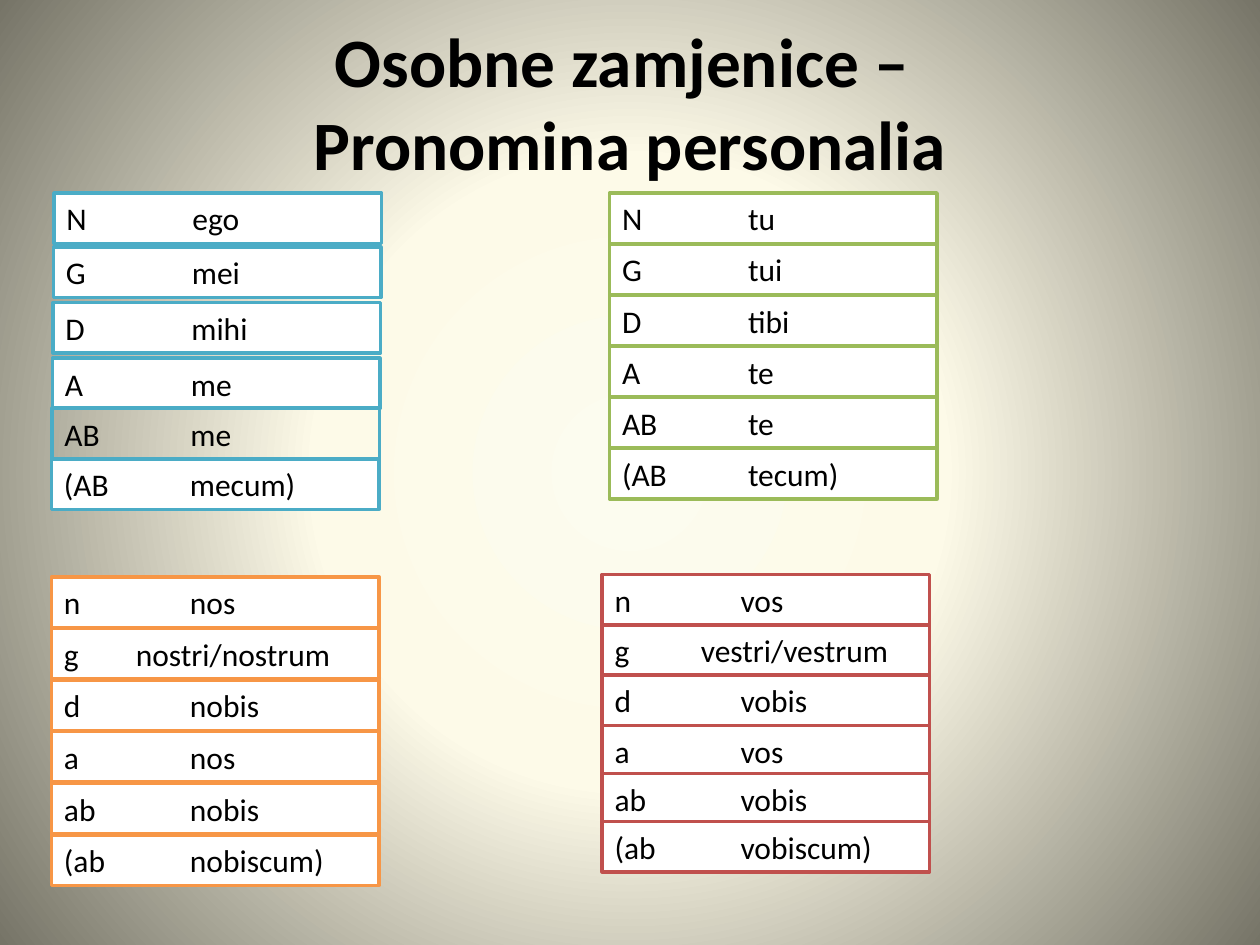
from pptx import Presentation
from pptx.dml.color import RGBColor
from pptx.enum.shapes import MSO_SHAPE
from pptx.enum.text import MSO_ANCHOR, MSO_AUTO_SIZE, PP_ALIGN
from pptx.oxml import parse_xml
from pptx.oxml.ns import nsdecls
from pptx.util import Cm, Pt

RECT = MSO_SHAPE.RECTANGLE
MIDDLE = MSO_ANCHOR.MIDDLE
NO_FIT = MSO_AUTO_SIZE.NONE
LEFT, CENTER = PP_ALIGN.LEFT, PP_ALIGN.CENTER

FONT = "Calibri"
COLORS = {
    "text": "000000", "row": "FFFFFF",
    "ego": "4BACC6", "tu": "9BBB59", "nos": "F79646", "vos": "C0504D",
    "bg_inner": "FCFCEF", "bg_middle": "FDFAE8", "bg_outer": "767467",
}
ROW_W, ROW_H = 6.6, 1.02
TAB = 2.54


def rgb(name):
    return RGBColor.from_string(COLORS[name])


def style_paragraph(p, size, align, bold=False):
    p.alignment = align
    p.font.name = FONT
    p.font.size = Pt(size)
    p.font.bold = bold
    p.font.color.rgb = rgb("text")


def add_background(slide):
    stops = "".join(
        f'<a:gs pos="{pos * 1000}"><a:srgbClr val="{COLORS[name]}"/></a:gs>'
        for pos, name in ((0, "bg_inner"), (40, "bg_middle"), (100, "bg_outer")))
    bg = parse_xml(
        f'<p:bg {nsdecls("p", "a")}><p:bgPr><a:gradFill rotWithShape="1">'
        f'<a:gsLst>{stops}</a:gsLst><a:path path="circle">'
        '<a:fillToRect l="50000" t="50000" r="50000" b="50000"/></a:path>'
        '</a:gradFill><a:effectLst/></p:bgPr></p:bg>')
    slide.element.cSld.insert(0, bg)


def add_title(slide, left, top, width, height):
    sp = slide.shapes.title
    sp.left, sp.top, sp.width, sp.height = map(Cm, (left, top, width, height))
    tf = sp.text_frame
    tf.text = "Osobne zamjenice – \vPronomina personalia"
    tf.auto_size = NO_FIT
    tf.vertical_anchor = MIDDLE
    style_paragraph(tf.paragraphs[0], 39.6, CENTER, bold=True)


def add_row(slide, left, top, color, case, form, tab, filled):
    sp = slide.shapes.add_shape(RECT, Cm(left), Cm(top), Cm(ROW_W), Cm(ROW_H))
    sp.shadow.inherit = False
    if filled:
        sp.fill.solid()
        sp.fill.fore_color.rgb = rgb("row")
    else:
        sp.fill.background()
    sp.line.color.rgb = rgb(color)
    sp.line.width = Pt(2)
    tf = sp.text_frame
    tf.word_wrap = True
    tf.vertical_anchor = MIDDLE
    p = tf.paragraphs[0]
    p.text = f"{case}\t{form}"
    style_paragraph(p, 18, LEFT)
    # Tab stop where the pronoun form starts
    p._p.get_or_add_pPr().insert(0, parse_xml(
        f'<a:tabLst {nsdecls("a")}><a:tab pos="{Cm(tab)}" algn="l"/></a:tabLst>'))


def add_declension(slide, left, top, color, cases, forms, offsets,
                   drift=0, genitive_tab=TAB, open_row=None):
    """Stack one row per case; drift shifts each row slightly sideways."""
    for i, (case, form, dy) in enumerate(zip(cases, forms, offsets)):
        tab = genitive_tab if i == 1 else TAB
        add_row(slide, left + i * drift, top + dy, color, case, form, tab,
                filled=i != open_row)


def even(pitch):
    return [i * pitch for i in range(6)]


def main():
    prs = Presentation()
    prs.slide_width, prs.slide_height = Cm(25.4), Cm(19.05)
    slide = prs.slides.add_slide(prs.slide_layouts[5])
    add_background(slide)
    add_title(slide, 1.27, 0.76, 22.86, 2.57)

    singular = ["N", "G", "D", "A", "AB", "(AB"]
    plural = [case.lower() for case in singular]

    # Singular: first and second person
    add_declension(slide, 1.09, 3.89, "ego", singular,
                   ["ego", "mei", "mihi", "me", "me", "mecum)"],
                   [0, 1.09, 2.21, 3.33, 4.34, 5.36], drift=-0.01, open_row=4)
    add_declension(slide, 12.29, 3.89, "tu", singular,
                   ["tu", "tui", "tibi", "te", "te", "tecum)"], even(1.03))

    # Plural: first and second person
    add_declension(slide, 1.04, 11.63, "nos", plural,
                   ["nos", "nostri/nostrum", "nobis", "nos", "nobis", "nobiscum)"],
                   even(1.04), genitive_tab=1.45)
    add_declension(slide, 12.14, 11.58, "vos", plural,
                   ["vos", "vestri/vestrum", "vobis", "vos", "vobis", "vobiscum)"],
                   [0, 1.02, 2.03, 3.05, 4.01, 4.98], genitive_tab=1.74)

    prs.save("out.pptx")


if __name__ == "__main__":
    main()
